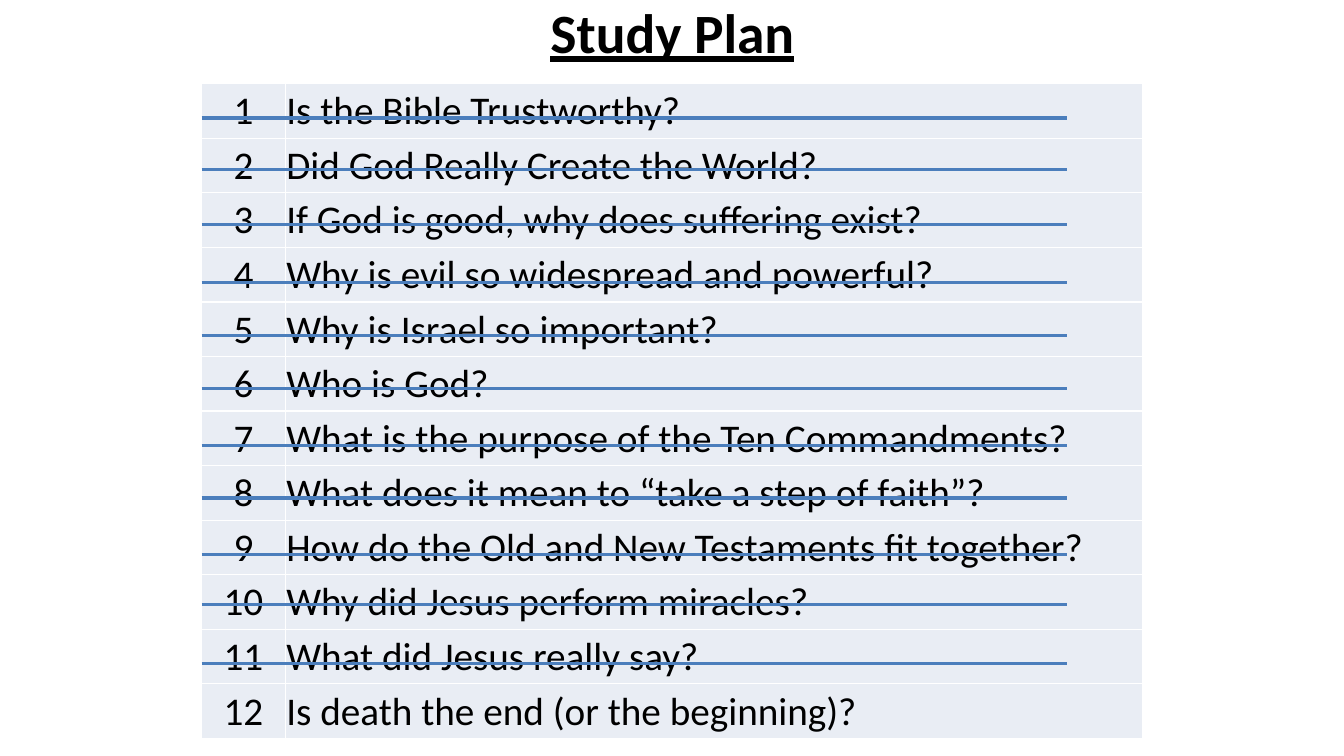
from dataclasses import dataclass

import pptx
import pptx.dml.color
import pptx.enum.shapes
import pptx.enum.text
import pptx.oxml
import pptx.oxml.ns
import pptx.util

SLIDE_W, SLIDE_H = 13.33, 7.5
TABLE_LEFT, TABLE_TOP = 2, 0.83
NUMBER_W, TOPIC_W = 0.83, 8.5
ROW_H = 6.5 / 12
STRIKE_W = 8.58
FONT = "Calibri"
BLACK, WHITE, CELL_FILL, STRIKE = "000000", "FFFFFF", "E9EDF4", "4B7EBC"

PP_ALIGN = pptx.enum.text.PP_ALIGN
MIDDLE = pptx.enum.text.MSO_ANCHOR.MIDDLE
inch = pptx.util.Inches


@dataclass
class Topic:
    title: str
    strike: float | None = None  # height of the strike line, as a share of the row


TOPICS = [
    Topic("Is the Bible Trustworthy?", 0.63),
    Topic("Did God Really Create the World?", 0.57),
    Topic("If God is good, why does suffering exist?", 0.58),
    Topic("Why is evil so widespread and powerful?", 0.64),
    Topic("Why is Israel so important?", 0.62),
    Topic("Who is God?", 0.58),
    Topic("What is the purpose of the Ten Commandments?", 0.63),
    Topic("What does it mean to “take a step of faith”?", 0.59),
    Topic("How do the Old and New Testaments fit together?", 0.62),
    Topic("Why did Jesus perform miracles?", 0.54),
    Topic("What did Jesus really say?", 0.62),
    Topic("Is death the end (or the beginning)?"),
]


def rgb(value: str) -> pptx.dml.color.RGBColor:
    return pptx.dml.color.RGBColor.from_string(value)


def write(tf, text: str, size: float, align) -> pptx.text.text.Font:
    p = tf.paragraphs[0]
    p.text = text
    p.alignment = align
    p.font.name = FONT
    p.font.size = pptx.util.Pt(size)
    p.font.color.rgb = rgb(BLACK)
    return p.font


def add_title(s, text: str) -> None:
    tf = s.shapes.add_textbox(inch(2.17), inch(-0.08), inch(9), inch(0.78)).text_frame
    tf.word_wrap = True
    tf.vertical_anchor = MIDDLE
    font = write(tf, text, 39.6, PP_ALIGN.CENTER)
    font.bold = font.underline = True


def set_borders(cell, color: str, points: float) -> None:
    tcPr = cell._tc.get_or_add_tcPr()
    for side in ("lnL", "lnR", "lnT", "lnB"):
        tcPr.append(pptx.oxml.parse_xml(
            f'<a:{side} {pptx.oxml.ns.nsdecls("a")} w="{pptx.util.Pt(points)}">'
            f'<a:solidFill><a:srgbClr val="{color}"/></a:solidFill></a:{side}>'))


def fill_cell(cell, text: str, align) -> None:
    cell.margin_left = cell.margin_right = cell.margin_top = inch(0.01)
    cell.margin_bottom = 0
    cell.vertical_anchor = MIDDLE
    set_borders(cell, WHITE, 1)
    cell.fill.solid()
    cell.fill.fore_color.rgb = rgb(CELL_FILL)
    write(cell.text_frame, text, 28, align)


def add_plan(s, topics: list[Topic]) -> None:
    table = s.shapes.add_table(
        len(topics), 2, inch(TABLE_LEFT), inch(TABLE_TOP),
        inch(NUMBER_W + TOPIC_W), inch(ROW_H * len(topics))).table
    table.first_row = table.horz_banding = False
    table.columns[0].width, table.columns[1].width = inch(NUMBER_W), inch(TOPIC_W)
    for i, topic in enumerate(topics):
        table.rows[i].height = inch(ROW_H)
        fill_cell(table.cell(i, 0), str(i + 1), PP_ALIGN.CENTER)
        fill_cell(table.cell(i, 1), topic.title, PP_ALIGN.LEFT)


def add_strike(s, row: float) -> None:
    y = inch(TABLE_TOP + row * ROW_H)
    line = s.shapes.add_connector(
        pptx.enum.shapes.MSO_CONNECTOR.STRAIGHT,
        inch(TABLE_LEFT), y, inch(TABLE_LEFT + STRIKE_W), y)
    line.line.color.rgb = rgb(STRIKE)
    line.line.width = pptx.util.Pt(2.25)
    line._element.spPr.append(pptx.oxml.parse_xml(
        f'<a:effectLst {pptx.oxml.ns.nsdecls("a")}/>'))


def main() -> None:
    prs = pptx.Presentation()
    prs.slide_width, prs.slide_height = inch(SLIDE_W), inch(SLIDE_H)
    s = prs.slides.add_slide(prs.slide_layouts[6])

    # Heading and numbered topics
    add_title(s, "Study Plan")
    add_plan(s, TOPICS)

    # Strike out the topics already covered
    for i, topic in enumerate(TOPICS):
        if topic.strike is not None:
            add_strike(s, i + topic.strike)

    prs.save("out.pptx")


if __name__ == "__main__":
    main()
